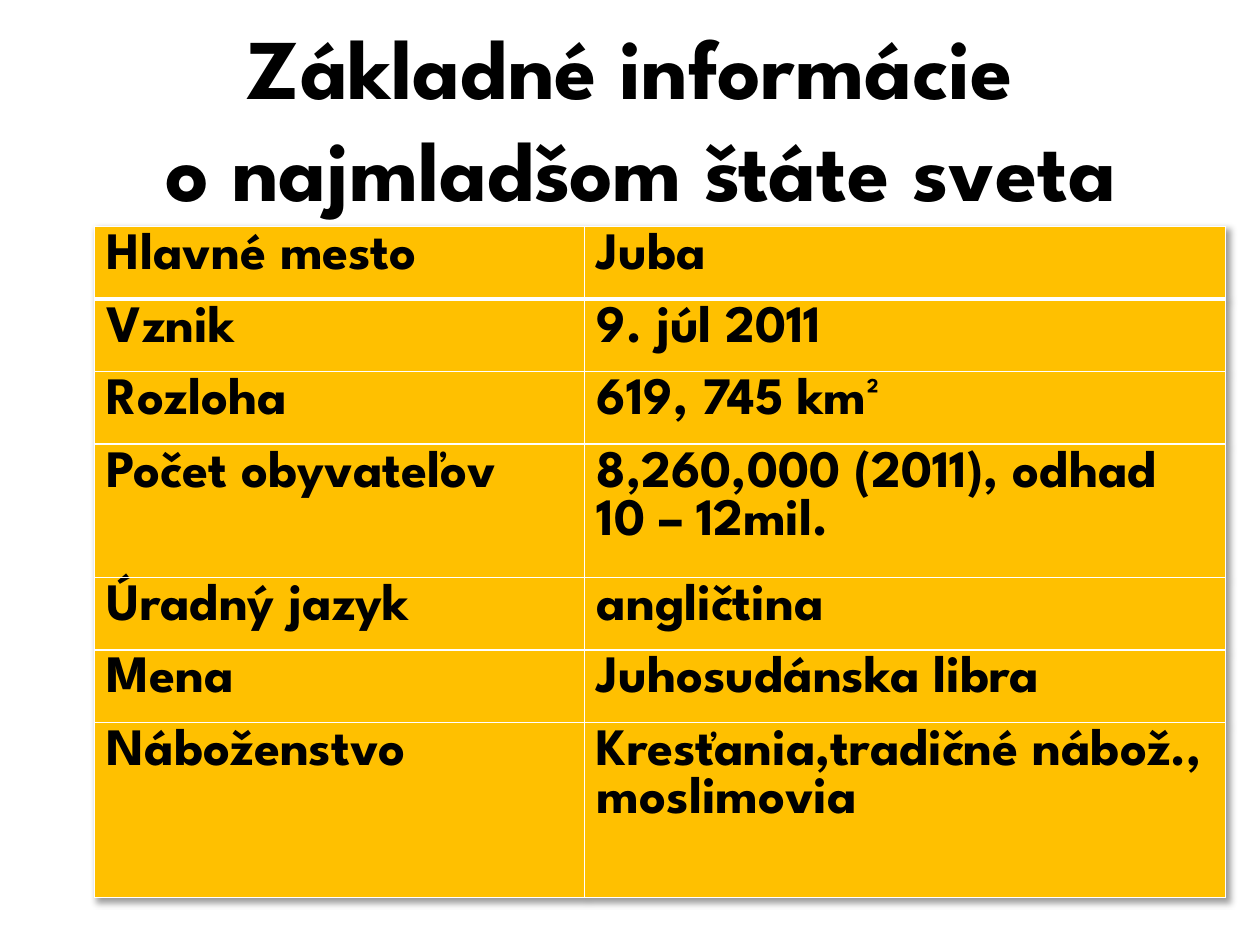
from lxml.etree import SubElement
from pptx import Presentation
from pptx.dml.color import RGBColor
from pptx.enum.text import MSO_ANCHOR as Anchor, PP_ALIGN as Align
from pptx.oxml import parse_xml
from pptx.oxml.ns import nsdecls, qn
from pptx.util import Cm, Pt

TITLE = "Základné informácie\v o najmladšom štáte sveta"
FACTS = [
    ("Hlavné mesto", "Juba", 1.46),
    ("Vznik", "9. júl 2011", 1.46),
    ("Rozloha", "619, 745 km²", 1.46),
    ("Počet obyvateľov", "8,260,000 (2011), odhad 10 – 12mil.", 2.69),
    ("Úradný jazyk", "angličtina", 1.46),
    ("Mena", "Juhosudánska libra", 1.46),
    ("Náboženstvo", "Kresťania,tradičné nábož., moslimovia", 3.53),
]
LABEL_WIDTH = 9.88
INK, GOLD, WHITE = "000000", "FFC000", "FFFFFF"


def color(hex_value):
    """Turn a hex string into a colour."""
    return RGBColor.from_string(hex_value)


def assign(target, values):
    """Set each attribute named in values on target."""
    for name, value in values.items():
        setattr(target, name, value)


def style_text(frame, size):
    """Apply the slide's bold lettering to every paragraph."""
    for paragraph in frame.paragraphs:
        for run in paragraph.runs:
            assign(run.font, {"name": "League Spartan", "size": Pt(size), "bold": True})
            run.font.color.rgb = color(INK)


def set_borders(cell, widths):
    """Draw white cell borders of the given point widths."""
    properties = cell._tc.get_or_add_tcPr()
    for index, (side, width) in enumerate(widths.items()):
        properties.insert(index, parse_xml(
            f'<a:ln{side} {nsdecls("a")} w="{Pt(width)}"><a:solidFill>'
            f'<a:srgbClr val="{WHITE}"/></a:solidFill></a:ln{side}>'))


def add_table_shadow(table):
    """Give the whole table a soft shadow to the lower right."""
    effects = SubElement(table._tbl.tblPr, qn("a:effectLst"))
    table._tbl.tblPr.insert(0, effects)
    effects.append(parse_xml(
        f'<a:outerShdw {nsdecls("a")} blurRad="50800" dist="38100" dir="2700000" '
        'algn="tl" rotWithShape="0"><a:prstClr val="black"><a:alpha val="40000"/>'
        '</a:prstClr></a:outerShdw>'))


def add_title(slide, left, top, width, height):
    """Place the centred two-line title."""
    frame = slide.shapes.add_textbox(Cm(left), Cm(top), Cm(width), Cm(height)).text_frame
    assign(frame, {"word_wrap": True, "vertical_anchor": Anchor.MIDDLE, "text": TITLE})
    assign(frame.paragraphs[0], {"alignment": Align.CENTER, "line_spacing": 1.0})
    style_text(frame, 48.6)


def add_facts(slide, left, top, width):
    """Place the table of facts about the country."""
    height = sum(row_height for _, _, row_height in FACTS)
    table = slide.shapes.add_table(
        len(FACTS), 2, Cm(left), Cm(top), Cm(width), Cm(height)).table
    for column, column_width in zip(table.columns, (LABEL_WIDTH, width - LABEL_WIDTH)):
        column.width = Cm(column_width)
    for index, (label, value, row_height) in enumerate(FACTS):
        table.rows[index].height = Cm(row_height)
        widths = {"L": 1, "R": 1, "T": 3 if index == 1 else 1, "B": 3 if index == 0 else 1}
        for cell, text in zip(table.rows[index].cells, (label, value)):
            assign(cell, {"text": text, "margin_bottom": Cm(0)})
            style_text(cell.text_frame, 30)
            cell.fill.solid()
            cell.fill.fore_color.rgb = color(GOLD)
            set_borders(cell, widths)
    add_table_shadow(table)


def main():
    """Build and save the slide."""
    deck = Presentation()
    assign(deck, {"slide_width": Cm(25.4), "slide_height": Cm(19.05)})
    slide = deck.slides.add_slide(deck.slide_layouts[6])
    add_title(slide, 1.27, 0.76, 22.86, 3.18)
    add_facts(slide, 1.9, 4.57, 22.8)
    deck.save("out.pptx")


if __name__ == "__main__":
    main()
